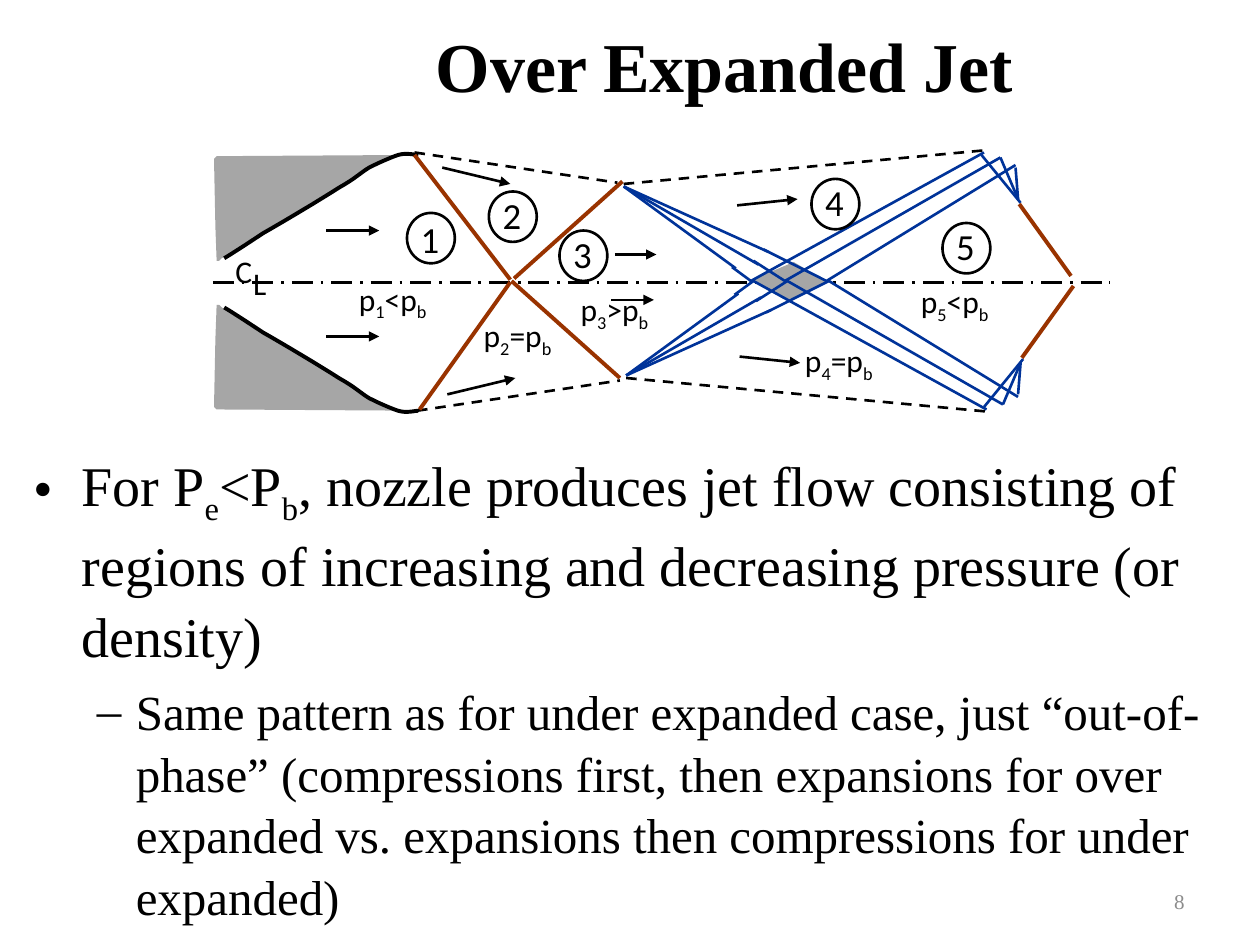
from pptx import Presentation
from pptx.dml.color import RGBColor
from pptx.enum.dml import MSO_LINE
from pptx.enum.shapes import MSO_CONNECTOR, MSO_SHAPE
from pptx.enum.text import MSO_ANCHOR, PP_ALIGN
from pptx.oxml.ns import qn
from pptx.util import Inches, Pt
from lxml.etree import SubElement

COLORS = {
    "text": "000000", "page": "8C8C8C", "white": "FFFFFF",
    "wall": "A6A6A6", "shock": "993300", "fan": "003399",
}
SERIF, SANS = "Times New Roman", "Calibri"

WALL_CURVES = [
    [(1.83, 2.02), (1.94, 1.95), (2.09, 1.85)],
    [(2.25, 1.76), (2.55, 1.58), (2.69, 1.49)],
    [(2.83, 1.41), (2.85, 1.38), (2.93, 1.33)],
    [(3.01, 1.29), (3.10, 1.25), (3.16, 1.23)],
    [(3.23, 1.21), (3.29, 1.23), (3.32, 1.23)],
]
BLOCK_EDGE = [(1.72, 1.24), (1.70, 1.26), (1.70, 1.32), (1.71, 1.80), (1.72, 2.07), (1.74, 2.07)]


def rgb(name):
    return RGBColor.from_string(COLORS[name])


def sample_curves(start, curves, steps=8):
    points = [start]
    for first, second, end in curves:
        origin = points[-1]
        for step in range(1, steps + 1):
            t = step / steps
            weights = ((1 - t) ** 3, 3 * t * (1 - t) ** 2, 3 * t * t * (1 - t), t ** 3)
            corners = (origin, first, second, end)
            points.append(tuple(sum(w * c[axis] for w, c in zip(weights, corners)) for axis in (0, 1)))
    return points


def mirror(points, axis_y, shift=0):
    return [(x + shift, 2 * axis_y - y) for x, y in points]


def write_text(paragraph, text, size=18, font=SANS, color="text", bold=False,
               align=PP_ALIGN.LEFT, bullet=None, margin=0, hanging=0, before=0, spacing=None):
    paragraph.alignment = align
    if bullet:
        properties = paragraph._p.get_or_add_pPr()
        properties.set("marL", str(Inches(margin)))
        properties.set("indent", str(-Inches(hanging)))
        SubElement(properties, qn("a:buFont")).set("typeface", font)
        SubElement(properties, qn("a:buChar")).set("char", bullet)
    if before:
        paragraph.space_before = Pt(before)
    if spacing:
        paragraph.line_spacing = spacing
    plain, *rest = text.split("_")
    pieces = [(plain, False)]
    for piece in rest:
        pieces += [(piece[0], True), (piece[1:], False)]
    for content, lowered in pieces:
        if not content:
            continue
        run = paragraph.add_run()
        run.text = content
        run.font.size, run.font.name, run.font.bold = Pt(size), font, bold
        run.font.color.rgb = rgb(color)
        if lowered:
            run._r.get_or_add_rPr().set("baseline", "-25000")


class JetSlide:
    def __init__(self, presentation):
        self.slide = presentation.slides.add_slide(presentation.slide_layouts[5])
        self.shapes = self.slide.shapes

    def title(self, text, left, top, width, height):
        shape = self.shapes.title
        shape.left, shape.top, shape.width, shape.height = map(Inches, (left, top, width, height))
        shape.text_frame.vertical_anchor = MSO_ANCHOR.MIDDLE
        write_text(shape.text_frame.paragraphs[0], text, size=40, font=SERIF,
                   bold=True, align=PP_ALIGN.CENTER)

    def text_box(self, left, top, width, height, anchor=MSO_ANCHOR.TOP):
        frame = self.shapes.add_textbox(*map(Inches, (left, top, width, height))).text_frame
        frame.word_wrap = True
        frame.vertical_anchor = anchor
        return frame

    def label(self, text, left, top, width=1.19, height=0.5, size=18):
        write_text(self.text_box(left, top, width, height).paragraphs[0], text, size=size)

    def outline(self, line, color, width):
        line.color.rgb = rgb(color)
        line.width = Pt(width)

    def line(self, start, end, color="text", width=1.5, dash=None, arrow=False):
        connector = self.shapes.add_connector(MSO_CONNECTOR.STRAIGHT, *map(Inches, start + end))
        self.outline(connector.line, color, width)
        if dash:
            connector.line.dash_style = dash
        if arrow:
            SubElement(connector.line._get_or_add_ln(), qn("a:tailEnd")).set("type", "triangle")
        SubElement(connector._element.spPr, qn("a:effectLst"))

    def polyline(self, points, color="text", width=1.5):
        shape = self.freeform(points, False)
        shape.fill.background()
        self.outline(shape.line, color, width)

    def area(self, points):
        shape = self.freeform(points, True)
        shape.fill.solid()
        shape.fill.fore_color.rgb = rgb("wall")
        shape.line.fill.background()

    def freeform(self, points, close):
        corners = [(Inches(x), Inches(y)) for x, y in points]
        builder = self.shapes.build_freeform(*corners[0])
        builder.add_line_segments(corners[1:], close=close)
        shape = builder.convert_to_shape()
        shape.shadow.inherit = False
        return shape

    def region(self, number, left, top, drop=-0.04):
        circle = self.shapes.add_shape(MSO_SHAPE.OVAL, *map(Inches, (left, top, 0.38, 0.4)))
        circle.shadow.inherit = False
        circle.fill.solid()
        circle.fill.fore_color.rgb = rgb("white")
        self.outline(circle.line, "text", 1.5)
        self.label(str(number), left + 0.01, top + drop, 0.38, 0.45, size=21)


def draw_nozzle(jet):
    wall = sample_curves((1.78, 2.05), WALL_CURVES)
    block = BLOCK_EDGE + [(x - 0.02, y) for x, y in wall]
    for flip in (lambda points: points, lambda points: mirror(points, 2.245)):
        jet.area(flip(block))
        jet.polyline(flip(wall), width=2.25)


def draw_jet(jet):
    for start, end in [((3.29, 1.21), (4.9, 1.45)), ((3.31, 3.26), (4.92, 3.02))]:
        jet.line(start, end, dash=MSO_LINE.DASH)
    for start, end in [((4.05, 2.22), (3.29, 1.23)), ((4.05, 2.24), (3.33, 3.25)),
                       ((4.06, 2.23), (4.92, 3)), ((4.08, 2.21), (4.94, 1.44))]:
        jet.line(start, end, color="shock", width=2.25)
    for start, end in [((2.59, 1.83), (3.01, 1.83)), ((2.59, 2.67), (3.01, 2.67)),
                       ((3.51, 1.33), (4.05, 1.46)), ((3.55, 3.13), (4.09, 3)),
                       ((4.88, 2.02), (5.21, 2.02)), ((4.85, 2.38), (5.19, 2.38))]:
        jet.line(start, end, arrow=True)

    fan_lines = [((4.95, 1.48), end) for end in [(5.84, 2.13), (6.02, 2.1), (6.1, 2)]]
    fan_lines += [((7.79, 1.23), (8.1, 1.61)), ((7.94, 1.25), (8.08, 1.58)), ((8.06, 1.33), (8.08, 1.58))]
    reflections = [
        [(5.81, 2.12), (5.96, 2.23), (7.81, 1.21)],
        [(5.98, 2.07), (6.23, 2.23), (7.94, 1.25)],
        [(6.06, 1.98), (6.56, 2.23), (8.06, 1.31)],
    ]
    for flip in (lambda points: points, lambda points: mirror(points, 2.23, 0.02)):
        for segment in fan_lines:
            jet.line(*flip(segment), color="fan")
        for points in reflections:
            jet.polyline(flip(points), color="fan")
        jet.line(*flip([(4.95, 1.46), (7.85, 1.19)]), dash=MSO_LINE.DASH)
        jet.line(*flip([(5.85, 1.63), (6.33, 1.58)]), arrow=True)
        jet.line(*flip([(8.09, 1.62), (8.5, 2.19)]), color="shock", width=2.25)


def main():
    presentation = Presentation()
    presentation.slide_width, presentation.slide_height = Inches(10), Inches(7.5)
    jet = JetSlide(presentation)
    jet.title("Over Expanded Jet", 2, 0.15, 7.5, 0.73)

    body = jet.text_box(0.17, 3.5, 9.5, 3.7)
    write_text(body.paragraphs[0],
               "For P_e<P_b, nozzle produces jet flow consisting of regions of increasing "
               "and decreasing pressure (or density)",
               size=32, font=SERIF, bullet="•", margin=0.38, hanging=0.38, spacing=1.05)
    detail = body.add_paragraph()
    detail.level = 1
    write_text(detail,
               "Same pattern as for under expanded case, just “out-of-phase” (compressions first, "
               "then expansions for over expanded vs. expansions then compressions for under expanded)",
               size=28, font=SERIF, bullet="–", margin=0.81, hanging=0.31, before=5.6, spacing=1.05)
    page = jet.text_box(7.17, 6.95, 2.33, 0.4, MSO_ANCHOR.MIDDLE)
    write_text(page.paragraphs[0], "8", size=12, font=SERIF, color="page", align=PP_ALIGN.RIGHT)

    jet.line((1.69, 2.24), (8.81, 2.24), dash=MSO_LINE.LONG_DASH_DOT)
    draw_nozzle(jet)
    jet.area([(5.97, 2.22), (6.3, 2.08), (6.57, 2.24), (6.26, 2.38)])
    draw_jet(jet)

    jet.region(1, 3.23, 1.69, drop=-0.02)
    for number, left, top in [(2, 3.88, 1.52), (3, 4.44, 1.83), (4, 6.44, 1.42), (5, 7.48, 1.77)]:
        jet.region(number, left, top)
    jet.label("C", 1.77, 1.95, 0.42)
    jet.label("L", 1.91, 2.05, 0.38)
    for text, left, top in [("p_1<p_b", 2.75, 2.17), ("p_2=p_b", 3.74, 2.46), ("p_3>p_b", 4.51, 2.25),
                            ("p_4=p_b", 6.29, 2.66), ("p_5<p_b", 7.21, 2.19)]:
        jet.label(text, left, top)

    presentation.save("out.pptx")


if __name__ == "__main__":
    main()
